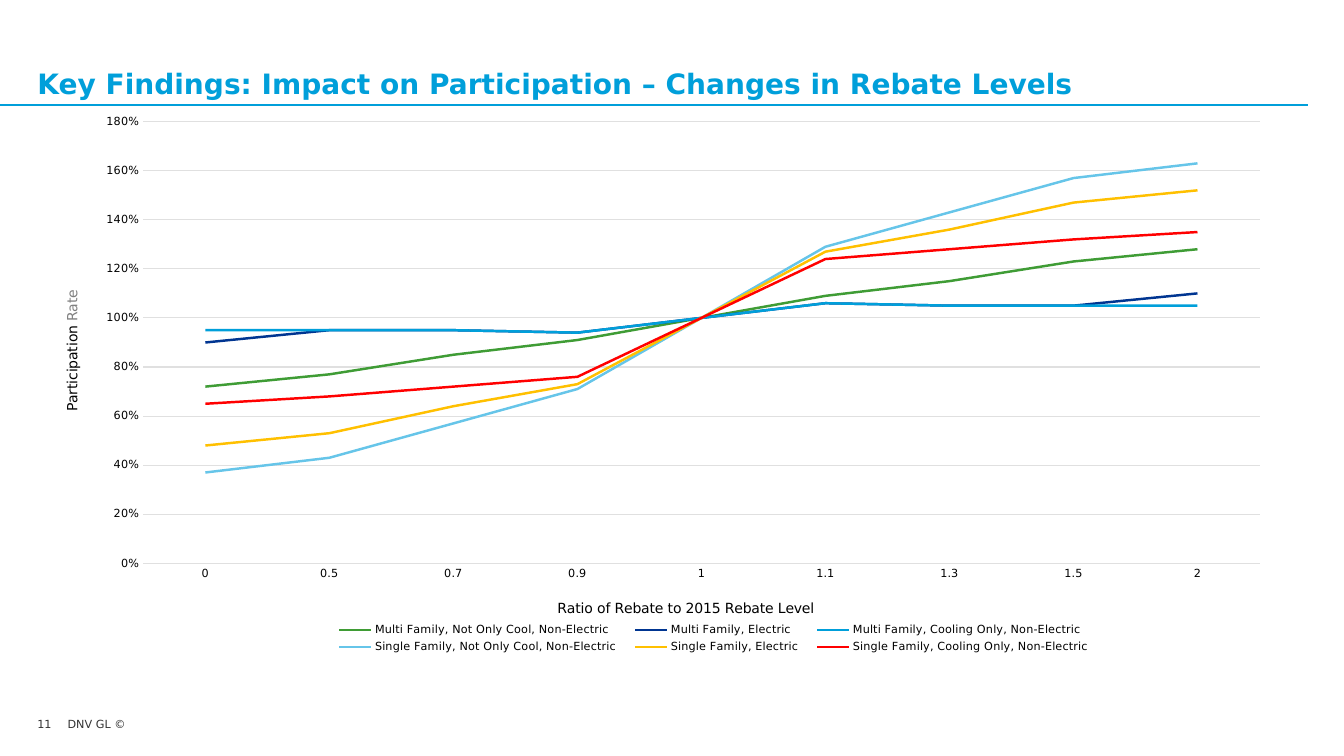
from lxml import etree
from pptx import Presentation
from pptx.chart.data import CategoryChartData
from pptx.dml.color import RGBColor
from pptx.enum import chart as ch, text as t
from pptx.oxml import ns
from pptx.util import Inches, Pt

SKY = RGBColor(0x00, 0x9F, 0xDA)
BLACK = RGBColor(0x00, 0x00, 0x00)
DARK = RGBColor(0x33, 0x33, 0x33)
GREY = RGBColor(0x7F, 0x7F, 0x7F)
GRID = RGBColor(0xE0, 0xE0, 0xE0)
GREEN = RGBColor(0x3F, 0x9C, 0x35)
NAVY = RGBColor(0x00, 0x35, 0x91)
LIGHT_BLUE = RGBColor(0x66, 0xC5, 0xE9)
AMBER = RGBColor(0xFF, 0xC0, 0x00)
RED = RGBColor(0xFF, 0x00, 0x00)
FONT = "DejaVu Sans"

TITLE = "Key Findings: Impact on Participation – Changes in Rebate Levels"
FOOTERS = [("DNV GL ©", 0.67, 0.59), ("11", 0.37, 0.3)]
REBATE_RATIOS = [0, 0.5, 0.7, 0.9, 1, 1.1, 1.3, 1.5, 2]
SERIES = [
    ("Multi Family, Not Only Cool, Non-Electric", GREEN,
     [0.72, 0.77, 0.85, 0.91, 1, 1.09, 1.15, 1.23, 1.28]),
    ("Multi Family, Electric", NAVY,
     [0.9, 0.95, 0.95, 0.94, 1, 1.06, 1.05, 1.05, 1.1]),
    ("Multi Family, Cooling Only, Non-Electric", SKY,
     [0.95, 0.95, 0.95, 0.94, 1, 1.06, 1.05, 1.05, 1.05]),
    ("Single Family, Not Only Cool, Non-Electric", LIGHT_BLUE,
     [0.37, 0.43, 0.57, 0.71, 1, 1.29, 1.43, 1.57, 1.63]),
    ("Single Family, Electric", AMBER,
     [0.48, 0.53, 0.64, 0.73, 1, 1.27, 1.36, 1.47, 1.52]),
    ("Single Family, Cooling Only, Non-Electric", RED,
     [0.65, 0.68, 0.72, 0.76, 1, 1.24, 1.28, 1.32, 1.35]),
]
X_TITLE = [("Ratio of Rebate to 2015 Rebate Level", BLACK)]
Y_TITLE = [("Participation ", BLACK), ("Rate", GREY)]


def style(font, size, color, bold=False):
    for name, value in {"name": FONT, "size": Pt(size), "bold": bold}.items():
        setattr(font, name, value)
    font.color.rgb = color


def set_frame(tf, anchor, wrap):
    values = {"margin_left": 0, "margin_right": 0, "margin_top": 0, "margin_bottom": 0,
              "vertical_anchor": anchor, "word_wrap": wrap, "auto_size": t.MSO_AUTO_SIZE.NONE}
    for name, value in values.items():
        setattr(tf, name, value)


def add_run(p, words, size, color, bold=False):
    r = p.add_run()
    r.text = words
    style(r.font, size, color, bold)


def place(element, index, target=None, **fractions):
    for old in element.findall(ns.qn("c:layout")):
        element.remove(old)
    layout = etree.Element(ns.qn("c:layout"))
    manual = etree.SubElement(layout, ns.qn("c:manualLayout"))
    items = {"layoutTarget": target} if target else {}
    items.update(xMode="edge", yMode="edge", **fractions)
    for tag, value in items.items():
        etree.SubElement(manual, ns.qn("c:" + tag)).set("val", str(value))
    element.insert(index, layout)


def title_axis(axis, runs, x, y):
    p = axis.axis_title.text_frame.paragraphs[0]
    for words, color in runs:
        add_run(p, words, 10, color)
    place(axis.axis_title._element, 1, x=x, y=y)


def add_participation_chart(s):
    data = CategoryChartData(number_format="0%")
    data.categories = REBATE_RATIOS
    for name, _, values in SERIES:
        data.add_series(name, values)
    frame = s.shapes.add_chart(ch.XL_CHART_TYPE.LINE, Inches(0.37), Inches(1.03),
                               Inches(12.37), Inches(5.54), data)
    chart = frame.chart
    style(chart.font, 10, DARK)
    chart.has_title = False
    chart.plots[0].vary_by_categories = False
    for series, (_, color, _) in zip(chart.plots[0].series, SERIES):
        series.smooth = False
        series.format.line.color.rgb = color
        series.format.line.width = Pt(1.75)
        series.marker.style = ch.XL_MARKER_STYLE.NONE

    x_axis, y_axis = chart.category_axis, chart.value_axis
    for axis, number_format in ((x_axis, "0.00"), (y_axis, "0%")):
        axis.major_tick_mark = axis.minor_tick_mark = ch.XL_TICK_MARK.NONE
        axis.tick_labels.number_format = number_format
        axis.tick_labels.number_format_is_linked = False
        style(axis.tick_labels.font, 8, BLACK)
    y_axis.minimum_scale, y_axis.maximum_scale, y_axis.major_unit = 0, 1.8, 0.2
    y_axis.format.line.fill.background()
    x_axis.has_major_gridlines = False
    y_axis.has_major_gridlines = True
    for line in (x_axis.format.line, y_axis.major_gridlines.format.line):
        line.color.rgb = GRID
        line.width = Pt(0.75)
    title_axis(x_axis, X_TITLE, 0.415, 0.882)
    title_axis(y_axis, Y_TITLE, 0.018, 0.328)

    chart.has_legend = True
    chart.legend.position = ch.XL_LEGEND_POSITION.BOTTOM
    chart.legend.include_in_layout = False
    style(chart.legend.font, 8, BLACK)
    place(chart.legend._element, 1, x=0.23, y=0.925, w=0.625, h=0.065)
    plot_area = chart._chartSpace.chart.plotArea
    place(plot_area, 0, "inner", x=0.085, y=0.032, w=0.895, h=0.791)


def main():
    prs = Presentation()
    prs.slide_width, prs.slide_height = Inches(13.33), Inches(7.5)
    s = prs.slides.add_slide(prs.slide_layouts[5])

    title = s.shapes.title
    title.left, title.top = Inches(0.37), Inches(0.26)
    title.width, title.height = Inches(12.6), Inches(0.73)
    set_frame(title.text_frame, t.MSO_ANCHOR.BOTTOM, True)
    p = title.text_frame.paragraphs[0]
    p.alignment = t.PP_ALIGN.LEFT
    add_run(p, TITLE, 20, SKY, True)

    rule = s.shapes.add_connector(1, 0, Inches(1.04), Inches(12.97), Inches(1.04))
    rule.line.color.rgb = SKY
    rule.line.width = Pt(1.25)
    etree.SubElement(rule._element.spPr, ns.qn("a:effectLst"))

    for words, left, width in FOOTERS:
        sp = s.shapes.add_textbox(Inches(left), Inches(7.12), Inches(width), Inches(0.13))
        set_frame(sp.text_frame, t.MSO_ANCHOR.TOP, False)
        add_run(sp.text_frame.paragraphs[0], words, 8, DARK)

    add_participation_chart(s)
    prs.save("out.pptx")


if __name__ == "__main__":
    main()
